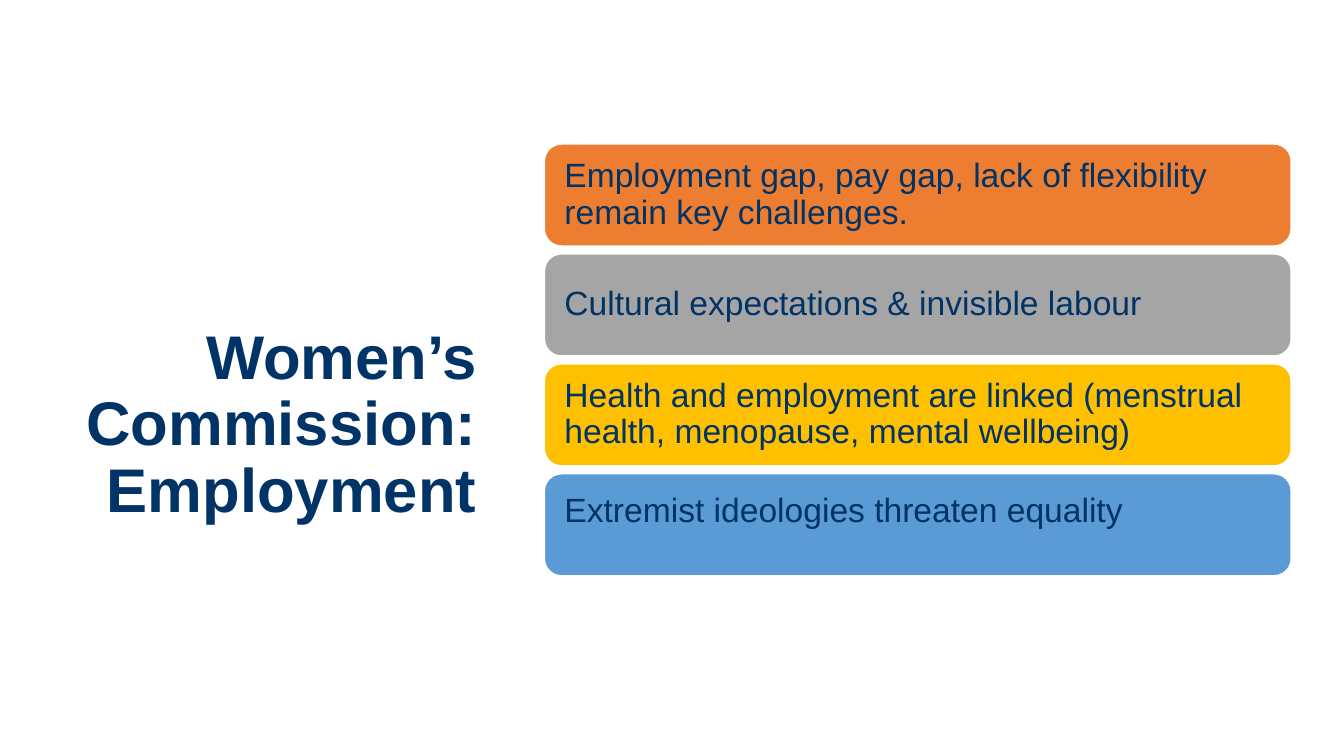
from dataclasses import dataclass

from pptx import Presentation
from pptx.dml.color import RGBColor
from pptx.enum.shapes import MSO_SHAPE
from pptx.enum.text import MSO_ANCHOR, MSO_AUTO_SIZE, PP_ALIGN
from pptx.util import Cm, Pt

ROUND = MSO_SHAPE.ROUNDED_RECTANGLE
TOP, MIDDLE = MSO_ANCHOR.TOP, MSO_ANCHOR.MIDDLE
LEFT, RIGHT = PP_ALIGN.LEFT, PP_ALIGN.RIGHT
FIXED = MSO_AUTO_SIZE.NONE


@dataclass(frozen=True)
class Theme:
    font: str = "Arial"
    ink: str = "003366"
    edge: str = "FFFFFF"
    title: int = 44
    body: int = 24


class Deck:
    """Holds the theme and the current slide, and draws its elements."""

    def __init__(self, theme):
        self.theme = theme
        self.show = Presentation()
        self.show.slide_width = Cm(33.87)
        self.show.slide_height = Cm(19.05)
        self.slide = self.show.slides.add_slide(self.show.slide_layouts[5])

    def label(self, shape, text, size, align, anchor, bold=False):
        frame = shape.text_frame
        frame.word_wrap = True
        frame.auto_size = FIXED
        frame.vertical_anchor = anchor
        para = frame.paragraphs[0]
        para.alignment = align
        para.line_spacing = 0.9
        run = para.add_run()
        run.text = text
        run.font.name = self.theme.font
        run.font.size = Pt(size)
        run.font.bold = bold
        run.font.color.rgb = RGBColor.from_string(self.theme.ink)

    def title(self, text, left, top, width, height):
        shape = self.slide.shapes.title
        shape.left, shape.top = Cm(left), Cm(top)
        shape.width, shape.height = Cm(width), Cm(height)
        self.label(shape, text, self.theme.title, RIGHT, MIDDLE, True)

    def card(self, text, fill, anchor, left, top, width, height):
        shape = self.slide.shapes.add_shape(
            ROUND, Cm(left), Cm(top), Cm(width), Cm(height))
        shape.shadow.inherit = False
        shape.fill.solid()
        shape.fill.fore_color.rgb = RGBColor.from_string(fill)
        shape.line.color.rgb = RGBColor.from_string(self.theme.edge)
        shape.line.width = Pt(1)
        frame = shape.text_frame
        frame.margin_left = frame.margin_right = Cm(0.38)
        frame.margin_top = frame.margin_bottom = Cm(0.36)
        self.label(shape, text, self.theme.body, LEFT, anchor)


def main():
    deck = Deck(Theme())
    deck.title("Women’s Commission: Employment", 1.32, 2.97, 10.95, 15.52)
    cards = [
        ("Employment gap, pay gap, lack of flexibility remain key challenges.",
         "ED7D31", MIDDLE),
        ("Cultural expectations & invisible labour", "A5A5A5", MIDDLE),
        ("Health and employment are linked "
         "(menstrual health, menopause, mental wellbeing)", "FFC000", MIDDLE),
        ("Extremist ideologies threaten equality", "5B9BD5", TOP),
    ]
    for row, (text, fill, anchor) in enumerate(cards):
        deck.card(text, fill, anchor, 13.72, 3.63 + 2.77 * row, 18.82, 2.57)
    deck.show.save("out.pptx")


if __name__ == "__main__":
    main()
